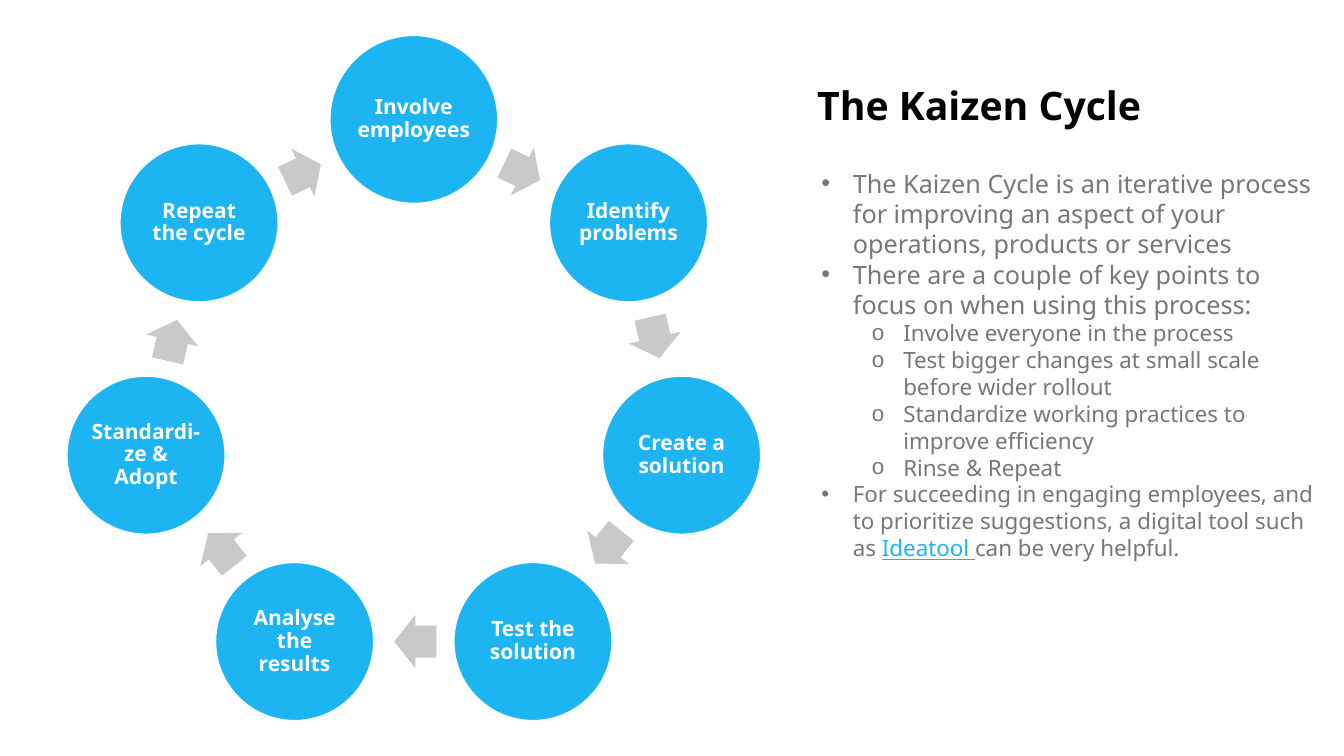
from math import cos, hypot, radians, sin, atan2, degrees

from lxml.etree import SubElement
from pptx import Presentation
from pptx.dml.color import RGBColor
from pptx.enum.shapes import MSO_SHAPE as Shape
from pptx.enum.text import MSO_ANCHOR as Anchor, MSO_AUTO_SIZE as AutoSize, PP_ALIGN as Align
from pptx.oxml.ns import qn
from pptx.util import Pt

BLUE = RGBColor(0x1C, 0xB5, 0xF2)
SILVER = RGBColor(0xC9, 0xC9, 0xC9)
GRAY = RGBColor(0x77, 0x77, 0x77)
BLACK = RGBColor(0, 0, 0)
WHITE = RGBColor(0xFF, 0xFF, 0xFF)

STEPS = [
    "Involve employees", "Identify problems", "Create a solution", "Test the solution",
    "Analyse the results", "Standardi-ze & Adopt", "Repeat the cycle",
]
POINTS = [
    (0, 18, [("The Kaizen Cycle is an iterative process for improving an aspect of your "
              "operations, products or services", False)]),
    (0, 18, [("There are a couple of key points to focus on when using this process:", False)]),
    (1, 16, [("Involve everyone in the process", False)]),
    (1, 16, [("Test bigger changes at small scale before wider rollout", False)]),
    (1, 16, [("Standardize working practices to improve efficiency", False)]),
    (1, 16, [("Rinse & Repeat", False)]),
    (0, 16, [("For succeeding in engaging employees, and to prioritize suggestions, "
              "a digital tool such as ", False),
             ("Ideatool ", True), ("can be very helpful.", False)]),
]
RING_X, RING_Y, RING_RADIUS = 295.6, 281.5, 196.2
FIRST_RADIUS, STEP_RADIUS = 60, 56.5
ARROW_LENGTH, ARROW_HEIGHT = 30, 38


class CyclePage:
    """Holds the font and the slide, and adds each kind of element to it."""

    def __init__(self, page, font):
        self.page = page
        self.font = font

    def span(self, para, text, size, color, bold=False):
        span = para.add_run()
        span.text = text
        span.font.name = self.font
        span.font.size = Pt(size)
        span.font.bold = bold
        span.font.color.rgb = color
        return span

    def place(self, box, left, top, width, height):
        box.left, box.top, box.width, box.height = map(Pt, (left, top, width, height))

    def shape(self, kind, x, y, width, height, color):
        shape = self.page.shapes.add_shape(
            kind, Pt(x - width / 2), Pt(y - height / 2), Pt(width), Pt(height))
        shape.shadow.inherit = False
        shape.fill.solid()
        shape.fill.fore_color.rgb = color
        return shape

    def step(self, x, y, radius, text):
        circle = self.shape(Shape.OVAL, x, y, 2 * radius, 2 * radius, BLUE)
        circle.line.color.rgb = WHITE
        circle.line.width = Pt(1)
        frame = circle.text_frame
        frame.word_wrap = True
        frame.vertical_anchor = Anchor.MIDDLE
        frame.margin_left = frame.margin_right = 0
        frame.margin_top = frame.margin_bottom = Pt(1.5)
        para = frame.paragraphs[0]
        para.alignment = Align.CENTER
        para.line_spacing = 0.9
        self.span(para, text, 15, WHITE, bold=True)

    def arrow(self, start, end):
        (x1, y1, radius1), (x2, y2, radius2) = start, end
        across, down = x2 - x1, y2 - y1
        shift = ((radius1 - radius2) / 2 - 1) / hypot(across, down)
        arrow = self.shape(
            Shape.RIGHT_ARROW, (x1 + x2) / 2 + shift * across, (y1 + y2) / 2 + shift * down,
            ARROW_LENGTH - abs(radius1 - radius2) / 2, ARROW_HEIGHT, SILVER)
        arrow.line.fill.background()
        arrow.adjustments[0] = 0.6
        arrow.adjustments[1] = 0.5
        arrow.rotation = degrees(atan2(down, across)) % 360

    def title(self, text, *area):
        box = self.page.shapes.title
        self.place(box, *area)
        frame = box.text_frame
        frame.auto_size = AutoSize.NONE
        frame.vertical_anchor = Anchor.MIDDLE
        para = frame.paragraphs[0]
        para.alignment = Align.LEFT
        para.line_spacing = 0.9
        self.span(para, text, 28, BLACK, bold=True)

    def bullets(self, points, *area):
        box = self.page.placeholders[1]
        self.place(box, *area)
        frame = box.text_frame
        frame.auto_size = AutoSize.NONE
        frame.vertical_anchor = Anchor.TOP
        for index, (level, size, spans) in enumerate(points):
            para = frame.add_paragraph() if index else frame.paragraphs[0]
            para.level = level
            para.space_before = Pt(0)
            para.line_spacing = 1.0
            layout = para._p.get_or_add_pPr()
            layout.set("marL", str(Pt(22.5 + 36 * level)))
            layout.set("indent", str(-Pt(22.5)))
            SubElement(layout, qn("a:buChar")).set("char", "•o"[level])
            for text, linked in spans:
                span = self.span(para, text, size, BLUE if linked else GRAY)
                span.font.underline = linked


def main():
    deck = Presentation()
    deck.slide_width, deck.slide_height = Pt(960), Pt(540)
    cycle = CyclePage(deck.slides.add_slide(deck.slide_layouts[1]), "Noto Sans")

    stops = []
    for index in range(len(STEPS)):
        angle = radians(360 / len(STEPS) * index)
        radius = STEP_RADIUS if index else FIRST_RADIUS
        stops.append((RING_X + RING_RADIUS * sin(angle),
                      RING_Y - RING_RADIUS * cos(angle), radius))
    for text, stop, following in zip(STEPS, stops, stops[1:] + stops[:1]):
        cycle.step(*stop, text)
        cycle.arrow(stop, following)

    cycle.title("The Kaizen Cycle", 576.5, 26, 383.5, 102)
    cycle.bullets(POINTS, 579.5, 116.5, 366, 291)
    deck.save("out.pptx")


if __name__ == "__main__":
    main()
